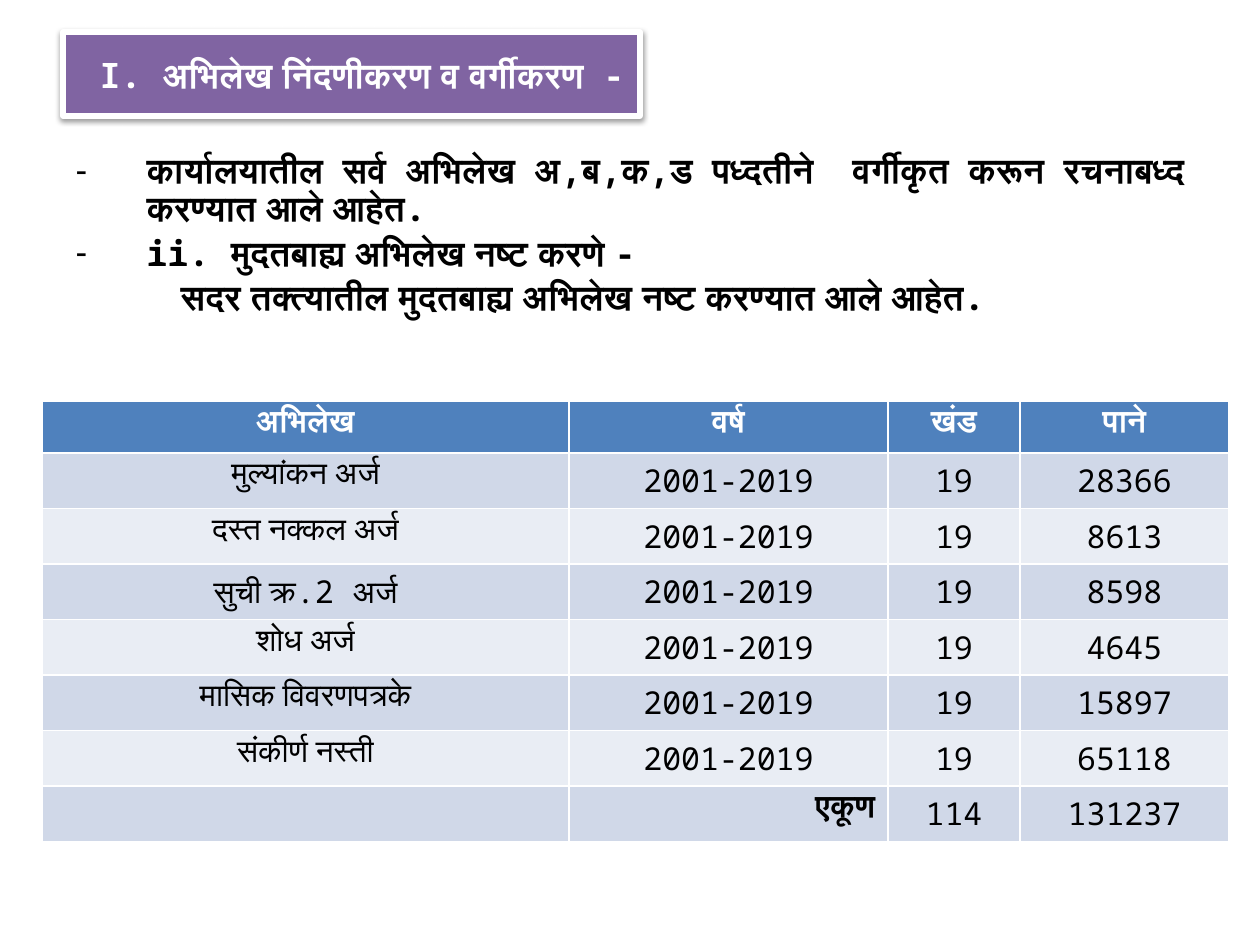
from lxml import etree
from pptx import Presentation
from pptx.dml.color import RGBColor
from pptx.enum.text import MSO_ANCHOR as Anchor, PP_ALIGN as Align
from pptx.oxml import parse_xml
from pptx.oxml.ns import nsdecls, qn
from pptx.util import Pt

PX = 914400 / 126
FONT = "Noto Sans Mono"
WHITE, BLACK = "FFFFFF", "000000"
PURPLE, BLUE = "8064A2", "4F81BD"
BANDS = ("D0D8E8", "E9EDF4")

TITLE = " I. अभिलेख निंदणीकरण व वर्गीकरण  -"
POINTS = [  # text, left margin, first-line indent, has a dash
    ("कार्यालयातील सर्व अभिलेख अ,ब,क,ड पध्दतीने  वर्गीकृत करून रचनाबध्द करण्यात आले आहेत.",
     71, -71, True),
    ("ii. मुदतबाह्य अभिलेख नष्ट करणे -", 71, -71, True),
    ("सदर तक्त्यातील मुदतबाह्य अभिलेख नष्ट करण्यात आले आहेत.", 105, 0, False),
]
HEADERS = ("अभिलेख", "वर्ष", "खंड", "पाने")
PAGES = {
    "मुल्यांकन अर्ज": 28366,
    "दस्त नक्कल अर्ज": 8613,
    "सुची क्र.2 अर्ज": 8598,
    "शोध अर्ज": 4645,
    "मासिक विवरणपत्रके": 15897,
    "संकीर्ण नस्ती": 65118,
}
YEARS, VOLUMES = "2001-2019", 19
COLUMN_WIDTHS = (527, 319, 132, 209)
HEADER_HEIGHT, ROW_HEIGHT = 52, 55


def px(length):
    return round(length * PX)


def color(hex_string):
    return RGBColor.from_string(hex_string)


def place(shape, box):
    shape.left, shape.top, shape.width, shape.height = map(px, box)


def write(paragraph, text, size=20, bold=False, fill=BLACK, align=Align.CENTER):
    run = paragraph.add_run()
    run.text = text
    run.font.name = FONT
    run.font.size = Pt(size)
    run.font.bold = bold
    run.font.color.rgb = color(fill)
    paragraph.alignment = align


def add_shadow(shape):
    shape._element.spPr.append(parse_xml(
        f'<a:effectLst {nsdecls("a")}>'
        '<a:outerShdw blurRad="40000" dist="20000" dir="5400000" rotWithShape="0">'
        '<a:srgbClr val="000000"><a:alpha val="38000"/></a:srgbClr>'
        '</a:outerShdw></a:effectLst>'))


def set_bullet(paragraph, margin, indent, dash):
    properties = paragraph._p.get_or_add_pPr()
    properties.set("marL", str(px(margin)))
    properties.set("indent", str(px(indent)))
    if dash:
        etree.SubElement(properties, qn("a:buChar")).set("char", "-")
    else:
        etree.SubElement(properties, qn("a:buNone"))


def fill_title(shape, box):
    place(shape, box)
    shape.fill.solid()
    shape.fill.fore_color.rgb = color(PURPLE)
    shape.line.color.rgb = color(WHITE)
    shape.line.width = Pt(3)
    add_shadow(shape)
    shape.text_frame.vertical_anchor = Anchor.MIDDLE
    write(shape.text_frame.paragraphs[0], TITLE, bold=True, fill=WHITE)


def fill_body(shape, box):
    place(shape, box)
    frame = shape.text_frame
    for number, (text, margin, indent, dash) in enumerate(POINTS):
        paragraph = frame.add_paragraph() if number else frame.paragraphs[0]
        write(paragraph, text, bold=True, align=Align.JUSTIFY)
        paragraph.line_spacing = 0.9
        set_bullet(paragraph, margin, indent, dash)


def add_records_table(slide, left, top):
    records = [(name, YEARS, VOLUMES, pages) for name, pages in PAGES.items()]
    total = ("", "एकूण", VOLUMES * len(PAGES), sum(PAGES.values()))
    rows = [HEADERS, *records, total]
    height = HEADER_HEIGHT + ROW_HEIGHT * (len(rows) - 1)
    table = slide.shapes.add_table(
        len(rows), len(HEADERS), px(left), px(top),
        px(sum(COLUMN_WIDTHS)), px(height)).table
    for column, width in zip(table.columns, COLUMN_WIDTHS):
        column.width = px(width)
    for r, values in enumerate(rows):
        header = r == 0
        table.rows[r].height = px(HEADER_HEIGHT if header else ROW_HEIGHT)
        for c, value in enumerate(values):
            cell = table.cell(r, c)
            cell.fill.solid()
            cell.fill.fore_color.rgb = color(BLUE if header else BANDS[(r - 1) % 2])
            total_label = values is total and c == 1
            if value != "":
                write(cell.text_frame.paragraphs[0], str(value), size=18,
                      bold=header or total_label,
                      fill=WHITE if header else BLACK,
                      align=Align.RIGHT if total_label else Align.CENTER)


def main():
    presentation = Presentation()
    presentation.slide_width, presentation.slide_height = px(1260), px(945)
    slide = presentation.slides.add_slide(presentation.slide_layouts[1])
    fill_title(slide.shapes.title, (63, 32, 577, 84))
    fill_body(slide.placeholders[1], (63, 147, 1134, 735))
    add_records_table(slide, 42, 401)
    presentation.save("out.pptx")


if __name__ == "__main__":
    main()
